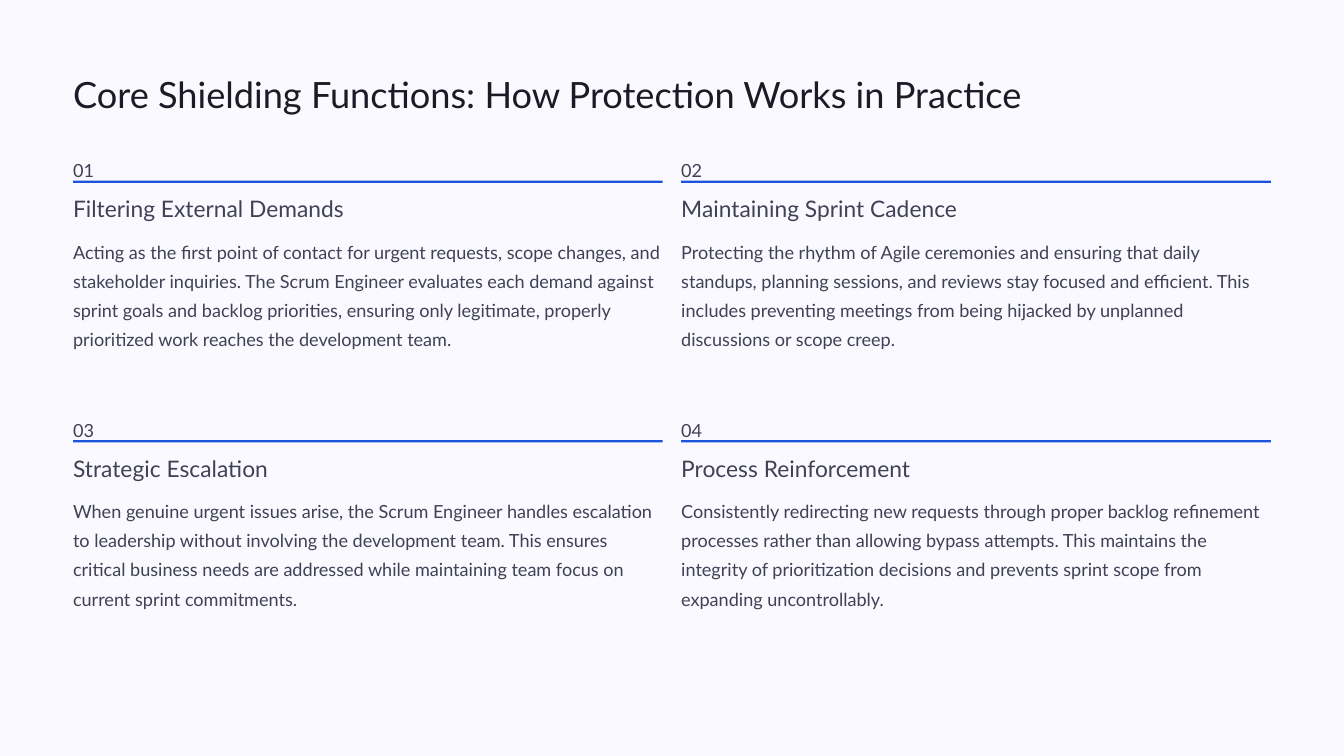
from pptx import Presentation
from pptx.dml.color import RGBColor
from pptx.enum.shapes import MSO_SHAPE
from pptx.enum.text import MSO_ANCHOR, MSO_AUTO_SIZE, PP_ALIGN
from pptx.util import Cm, Pt

FONT = "Lato"
BACKGROUND = "F9F9FF"
TITLE_COLOR = "1B1B27"
TEXT_COLOR = "404155"
RULE_COLOR = "1B54DA"

LEFT, TOP = 2.21, 4.6
COLUMN_WIDTH = 17.83
COLUMN_STEP, ROW_STEP = 18.39, 7.85

FUNCTIONS = [
    ("Filtering External Demands",
     "Acting as the first point of contact for urgent requests, scope changes, and "
     "stakeholder inquiries. The Scrum Engineer evaluates each demand against sprint "
     "goals and backlog priorities, ensuring only legitimate, properly prioritized "
     "work reaches the development team."),
    ("Maintaining Sprint Cadence",
     "Protecting the rhythm of Agile ceremonies and ensuring that daily standups, "
     "planning sessions, and reviews stay focused and efficient. This includes "
     "preventing meetings from being hijacked by unplanned discussions or scope creep."),
    ("Strategic Escalation",
     "When genuine urgent issues arise, the Scrum Engineer handles escalation to "
     "leadership without involving the development team. This ensures critical "
     "business needs are addressed while maintaining team focus on current sprint "
     "commitments."),
    ("Process Reinforcement",
     "Consistently redirecting new requests through proper backlog refinement "
     "processes rather than allowing bypass attempts. This maintains the integrity of "
     "prioritization decisions and prevents sprint scope from expanding "
     "uncontrollably."),
]


def color(hex_string):
    return RGBColor.from_string(hex_string)


def format_text(shape, text, size, line_spacing, hex_string, wrap):
    frame = shape.text_frame
    frame.text = text
    frame.margin_left = frame.margin_right = 0
    frame.margin_top = frame.margin_bottom = 0
    frame.auto_size = MSO_AUTO_SIZE.NONE
    frame.vertical_anchor = MSO_ANCHOR.TOP
    frame.word_wrap = wrap
    paragraph = frame.paragraphs[0]
    paragraph.alignment = PP_ALIGN.LEFT
    paragraph.line_spacing = Pt(line_spacing)
    paragraph.font.name = FONT
    paragraph.font.size = Pt(size)
    paragraph.font.color.rgb = color(hex_string)


def set_title(slide, text):
    title = slide.shapes.title
    title.left, title.top = Cm(LEFT), Cm(2.11)
    title.width, title.height = Cm(32.61), Cm(1.37)
    format_text(title, text, 31, 39, TITLE_COLOR, False)


def add_text(slide, left, top, width, height, text, size, line_spacing, wrap=False):
    box = slide.shapes.add_textbox(Cm(left), Cm(top), Cm(width), Cm(height))
    format_text(box, text, size, line_spacing, TEXT_COLOR, wrap)


def add_rule(slide, left, top):
    rule = slide.shapes.add_shape(
        MSO_SHAPE.RECTANGLE, Cm(left), Cm(top), Cm(COLUMN_WIDTH), Cm(0.07))
    rule.shadow.inherit = False
    rule.fill.solid()
    rule.fill.fore_color.rgb = color(RULE_COLOR)
    rule.line.fill.background()


def add_function(slide, index, heading, description):
    row, column = divmod(index, 2)
    left = LEFT + column * COLUMN_STEP
    top = TOP + row * ROW_STEP
    add_text(slide, left, top, 0.56, 0.69, f"{index + 1:02}", 15.5, 25)
    add_rule(slide, left, top + 0.86)
    add_text(slide, left, top + 1.27, 9.6, 0.86, heading, 19.5, 24)
    add_text(slide, left, top + 2.46, COLUMN_WIDTH, 3.53, description, 15.5, 25, True)


def main():
    presentation = Presentation()
    presentation.slide_width = Cm(40.64)
    presentation.slide_height = Cm(22.86)
    slide = presentation.slides.add_slide(presentation.slide_layouts[5])
    slide.background.fill.solid()
    slide.background.fill.fore_color.rgb = color(BACKGROUND)
    set_title(slide, "Core Shielding Functions: How Protection Works in Practice")
    for index, (heading, description) in enumerate(FUNCTIONS):
        add_function(slide, index, heading, description)
    presentation.save("out.pptx")


if __name__ == "__main__":
    main()
